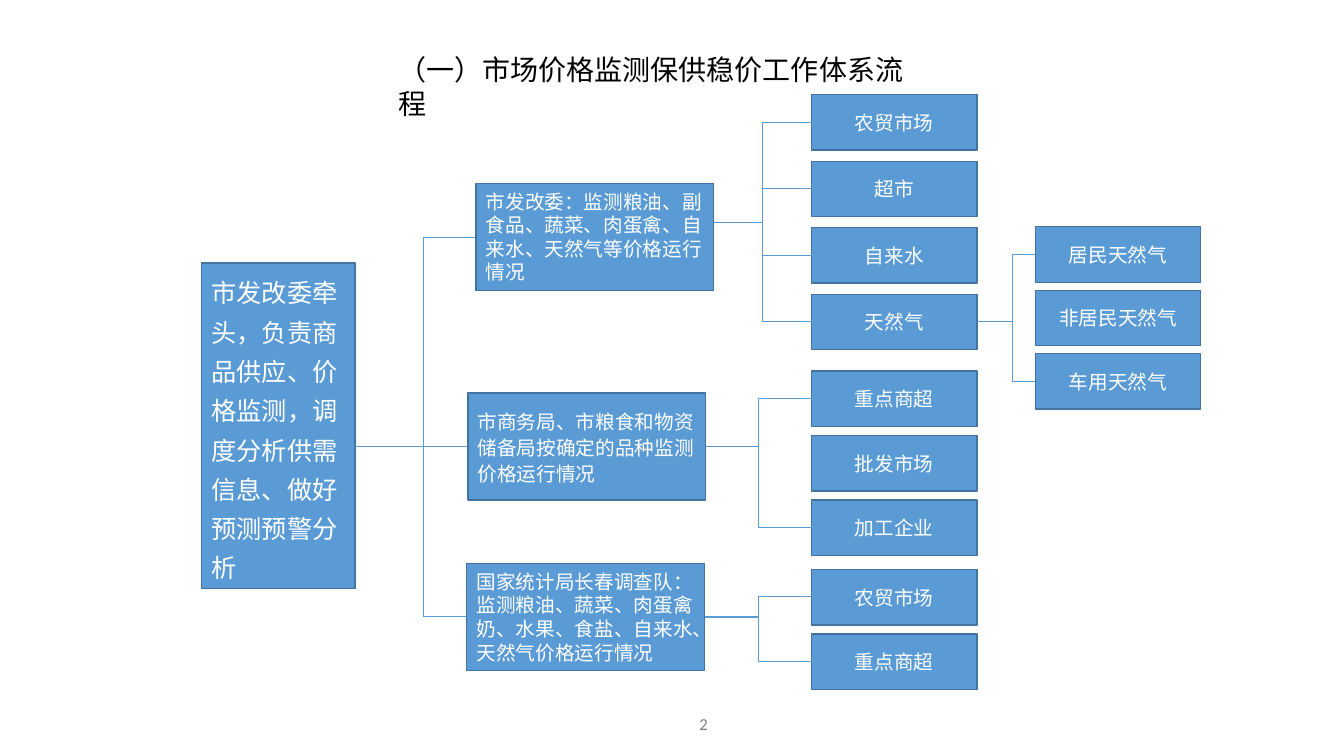
from dataclasses import dataclass

from lxml.etree import SubElement
from pptx import Presentation
from pptx.dml.color import RGBColor
from pptx.enum.lang import MSO_LANGUAGE_ID as Language
from pptx.enum.shapes import MSO_CONNECTOR as Connector, MSO_SHAPE as Shape
from pptx.enum.text import MSO_ANCHOR as Anchor, MSO_AUTO_SIZE as AutoSize, PP_ALIGN as Align
from pptx.oxml.ns import qn
from pptx.util import Emu, Pt


@dataclass(frozen=True)
class Theme:
    """Colours, fonts and type sizes of the slide."""
    black: str = "000000"
    white: str = "FFFFFF"
    grey: str = "808080"
    blue: str = "5B9BD5"
    outline: str = "43739E"
    chinese_font: str = "Noto Sans CJK SC"
    latin_font: str = "Calibri"
    title_size: int = 20
    root_size: int = 18
    body_size: int = 14
    number_size: int = 12


THEME = Theme()
PX = 9144
LEAF_WIDTH, LEAF_HEIGHT = 164, 55
BRANCH_WIDTH, BRANCH_HEIGHT = 236, 106
TITLE = "（一）市场价格监测保供稳价工作体系流程"
ROOT = "市发改委牵头，负责商品供应、价格监测，调度分析供需信息、做好预测预警分析"
REFORM = "市发改委：监测粮油、副食品、蔬菜、肉蛋禽、自来水、天然气等价格运行情况"
COMMERCE = "市商务局、市粮食和物资储备局按确定的品种监测价格运行情况"
SURVEY = "国家统计局长春调查队：监测粮油、蔬菜、肉蛋禽奶、水果、食盐、自来水、天然气价格运行情况"


def px(*lengths):
    """Turn pixel lengths into EMU."""
    return [Emu(round(length * PX)) for length in lengths]


def write_text(shape, text, size, color=THEME.white, font=THEME.latin_font,
               align=Align.LEFT, anchor=Anchor.MIDDLE, spacing=None, after=0):
    """Write one formatted paragraph into a shape."""
    frame = shape.text_frame
    frame.word_wrap = True
    frame.vertical_anchor = anchor
    frame.margin_left, frame.margin_top, frame.margin_right, frame.margin_bottom = px(10, 5, 10, 5)
    paragraph = frame.paragraphs[0]
    paragraph.alignment = align
    paragraph.space_after = Pt(after)
    if spacing:
        paragraph.line_spacing = spacing
    run = paragraph.add_run()
    run.text = text
    run.font.size = Pt(size)
    run.font.name = font
    run.font.color.rgb = RGBColor.from_string(color)
    run.font.language_id = Language.SIMPLIFIED_CHINESE
    if font == THEME.chinese_font:
        SubElement(run.font._element, qn("a:ea"), typeface=font)


def add_box(slide, box, text, size=THEME.body_size, **text_format):
    """Add a filled rectangle with text."""
    shape = slide.shapes.add_shape(Shape.RECTANGLE, *px(*box))
    shape.shadow.inherit = False
    shape.fill.solid()
    shape.fill.fore_color.rgb = RGBColor.from_string(THEME.blue)
    shape.line.color.rgb = RGBColor.from_string(THEME.outline)
    shape.line.width = Pt(1)
    write_text(shape, text, size, **text_format)


def add_line(slide, start, end, kind=Connector.STRAIGHT):
    """Add a thin connector between two points."""
    connector = slide.shapes.add_connector(kind, *px(*start, *end))
    connector.line.color.rgb = RGBColor.from_string(THEME.blue)
    connector.line.width = Pt(0.5)
    SubElement(connector._element.spPr, qn("a:effectLst"))


def add_bracket(slide, start, trunk, ends):
    """Join a start point to several ends through a vertical trunk."""
    add_line(slide, start, (trunk, start[1]))
    add_line(slide, (trunk, ends[0][1]), (trunk, ends[-1][1]))
    for end in ends:
        add_line(slide, (trunk, end[1]), end)


def add_elbows(slide, start, ends):
    """Join a start point to each end with an elbow connector."""
    for end in ends:
        add_line(slide, start, end, Connector.ELBOW)


def add_leaves(slide, left, top, pitch, names):
    """Stack leaf boxes and return the middles of their left edges."""
    tops = [top + pitch * index for index in range(len(names))]
    for name, leaf_top in zip(names, tops):
        add_box(slide, (left, leaf_top, LEAF_WIDTH, LEAF_HEIGHT), name, align=Align.CENTER)
    return [(left, leaf_top + LEAF_HEIGHT // 2) for leaf_top in tops]


def add_branch(slide, left, top, text, **text_format):
    """Add a branch box and return the middle of its right edge."""
    add_box(slide, (left, top, BRANCH_WIDTH, BRANCH_HEIGHT), text, **text_format)
    return left + BRANCH_WIDTH, top + BRANCH_HEIGHT // 2


def add_title(slide, box):
    """Fill the title placeholder."""
    title = slide.shapes.title
    title.left, title.top, title.width, title.height = px(*box)
    write_text(title, TITLE, THEME.title_size, color=THEME.black, font=THEME.chinese_font,
               anchor=Anchor.TOP, after=5)
    title.text_frame.auto_size = AutoSize.SHAPE_TO_FIT_TEXT


def add_page_number(slide, box):
    """Add the page number at the foot."""
    write_text(slide.shapes.add_textbox(*px(*box)), "2", THEME.number_size,
               color=THEME.grey, align=Align.CENTER)


def add_root(slide, box):
    """Add the leading office and its bracket to the three branches."""
    left, top, width, height = box
    add_box(slide, box, ROOT, THEME.root_size, spacing=1.3)
    add_bracket(slide, (left + width, top + 182), left + 220,
                [(left + 272, top - 26), (left + 264, top + 182), (left + 263, top + 350)])


def add_reform(slide, left, top):
    """Add the reform commission branch with its gas subdivision."""
    right, middle = add_branch(slide, left, top, REFORM)
    leaf_left = left + 333
    ends = add_leaves(slide, leaf_left, top - 88, 66, ["农贸市场", "超市", "自来水", "天然气"])
    add_bracket(slide, (right, middle - 14), right + 48, ends)
    gas_right = leaf_left + LEAF_WIDTH
    gas_ends = add_leaves(slide, gas_right + 58, top + 43, 63, ["居民天然气", "非居民天然气", "车用天然气"])
    add_bracket(slide, (gas_right, ends[-1][1]), gas_right + 35, [gas_ends[0], gas_ends[-1]])


def add_commerce(slide, left, top):
    """Add the commerce bureau branch."""
    right, middle = add_branch(slide, left, top, COMMERCE, spacing=1.1)
    ends = add_leaves(slide, left + 341, top - 22, 64, ["重点商超", "批发市场", "加工企业"])
    add_elbows(slide, (right, middle), [ends[0], ends[-1]])


def add_survey(slide, left, top):
    """Add the survey team branch."""
    right, middle = add_branch(slide, left, top, SURVEY)
    ends = add_leaves(slide, left + 342, top + 6, 64, ["农贸市场", "重点商超"])
    add_elbows(slide, (right, middle), ends)


def main():
    """Build and save the presentation."""
    presentation = Presentation()
    presentation.slide_width, presentation.slide_height = px(1333, 750)
    slide = presentation.slides.add_slide(presentation.slide_layouts[5])
    add_title(slide, (385, 47, 548, 44))
    add_page_number(slide, (548, 698, 300, 40))
    add_root(slide, (200, 261, 152, 323))
    add_reform(slide, 472, 182)
    add_commerce(slide, 464, 390)
    add_survey(slide, 463, 559)
    presentation.save("out.pptx")


if __name__ == "__main__":
    main()
